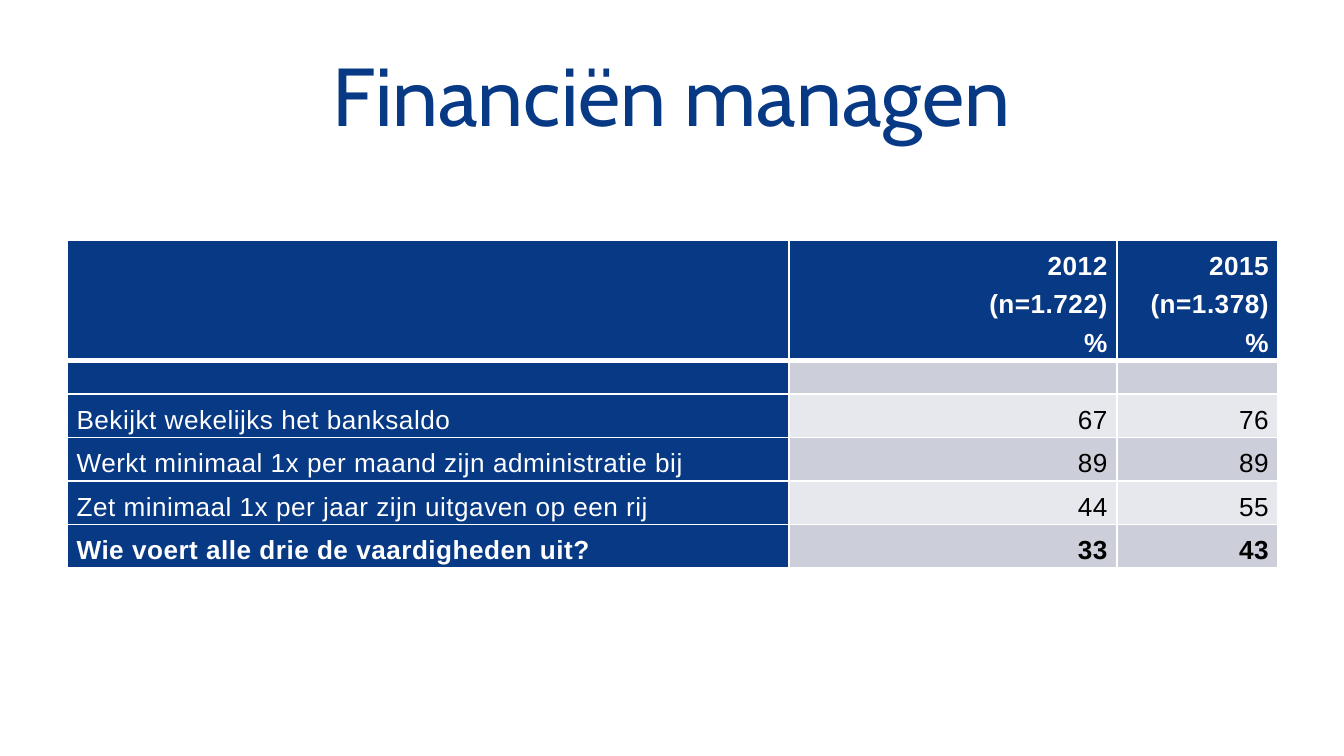
import pptx
import pptx.dml.color
import pptx.enum.text
import pptx.oxml.ns
import pptx.util
from dataclasses import dataclass
from lxml import etree

Inches, Pt = pptx.util.Inches, pptx.util.Pt
RGB = pptx.dml.color.RGBColor.from_string
ALIGN = pptx.enum.text.PP_ALIGN
ANCHOR = pptx.enum.text.MSO_ANCHOR
qn = pptx.oxml.ns.qn


@dataclass(frozen=True)
class Theme:
    blue: str = "083984"
    white: str = "FFFFFF"
    black: str = "000000"
    bands: tuple = ("CCCED9", "E7E8ED")
    title_font: str = "Cabin"
    body_font: str = "Arial"
    title_size: int = 44
    body_size: int = 14
    empty_size: int = 10
    spacing: float = 1.3
    tracking: int = 25  # hundredths of a point


THEME = Theme()

COL_WIDTHS = [5.37, 2.44, 1.2]
ROW_HEIGHTS = [0.89, 0.25] + [0.32] * 4
ROWS = [
    ("", "2012\n(n=1.722)\n%", "2015\n(n=1.378)\n%"),
    ("", "", ""),
    ("Bekijkt wekelijks het banksaldo", "67", "76"),
    ("Werkt minimaal 1x per maand zijn administratie bij", "89", "89"),
    ("Zet minimaal 1x per jaar zijn uitgaven op een rij", "44", "55"),
    ("Wie voert alle drie de vaardigheden uit?", "33", "43"),
]


def set_all(obj, formats):
    for name, value in formats.items():
        setattr(obj, name, value)


def add_title(slide, box, text):
    sp = slide.shapes.title
    set_all(sp, dict(zip(("left", "top", "width", "height"), map(Inches, box))))
    tf = sp.text_frame
    set_all(tf, {"text": text, "word_wrap": True, "vertical_anchor": ANCHOR.MIDDLE})
    p = tf.paragraphs[0]
    p.alignment = ALIGN.CENTER
    font = p.runs[0].font
    set_all(font, {"name": THEME.title_font, "size": Pt(THEME.title_size)})
    font.color.rgb = RGB(THEME.blue)


def set_borders(cell, bottom):
    """Draw white cell borders; bottom is the width of the lower one in points."""
    tcPr = cell._tc.get_or_add_tcPr()
    widths = {"a:lnL": 1, "a:lnR": 1, "a:lnT": 1, "a:lnB": bottom}
    for i, (tag, width) in enumerate(widths.items()):
        ln = etree.Element(qn(tag), w=str(Pt(width)))
        fill = etree.SubElement(ln, qn("a:solidFill"))
        etree.SubElement(fill, qn("a:srgbClr"), val=THEME.white)
        tcPr.insert(i, ln)


def fill_cell(cell, text, fill, color, bold, align, anchor):
    side, edge = Inches(0.07), Inches(0.02)
    set_all(cell, {"text": text, "vertical_anchor": anchor,
                   "margin_left": side, "margin_right": side,
                   "margin_top": edge, "margin_bottom": edge})
    cell.fill.solid()
    cell.fill.fore_color.rgb = RGB(fill)
    for p in cell.text_frame.paragraphs:
        if not p.runs:
            etree.SubElement(p._p, qn("a:endParaRPr"), sz=str(THEME.empty_size * 100))
            continue
        set_all(p, {"alignment": align, "line_spacing": THEME.spacing})
        for r in p.runs:
            set_all(r.font, {"name": THEME.body_font, "size": Pt(THEME.body_size),
                             "bold": bold})
            r.font.color.rgb = RGB(color)
            r.font._element.set("spc", str(THEME.tracking))


def add_skills_table(slide, left, top):
    frame = slide.shapes.add_table(
        len(ROWS), len(COL_WIDTHS), Inches(left), Inches(top),
        Inches(sum(COL_WIDTHS)), Inches(sum(ROW_HEIGHTS)))
    table = frame.table
    for column, width in zip(table.columns, COL_WIDTHS):
        column.width = Inches(width)
    for row, height in zip(table.rows, ROW_HEIGHTS):
        row.height = Inches(height)
    for i, texts in enumerate(ROWS):
        header = i == 0
        for j, text in enumerate(texts):
            dark = header or j == 0
            cell = table.cell(i, j)
            fill_cell(
                cell, text,
                fill=THEME.blue if dark else THEME.bands[(i - 1) % 2],
                color=THEME.white if dark else THEME.black,
                bold=header or i == len(ROWS) - 1,
                align=ALIGN.LEFT if j == 0 else ALIGN.RIGHT,
                anchor=ANCHOR.MIDDLE if dark else ANCHOR.TOP)
            set_borders(cell, bottom=3 if header else 1)


def main():
    prs = pptx.Presentation()
    width = Inches(10)
    set_all(prs, {"slide_width": width, "slide_height": width * 9 // 16})
    slide = prs.slides.add_slide(prs.slide_layouts.get_by_name("Title Only"))
    add_title(slide, (0.5, 0.23, 9, 0.94), "Financiën managen")
    add_skills_table(slide, 0.5, 1.79)
    prs.save("out.pptx")


if __name__ == "__main__":
    main()
